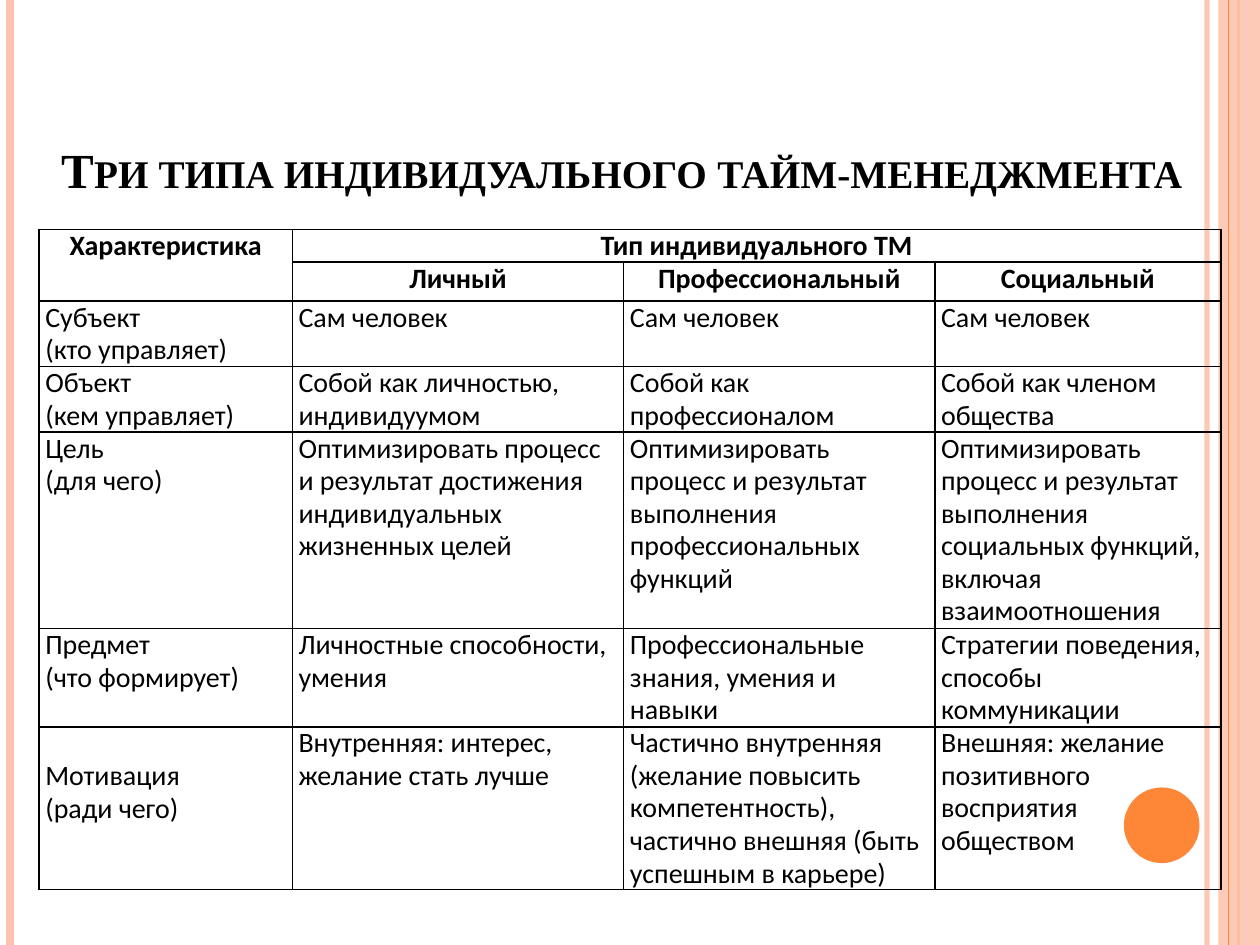
from lxml import etree
from pptx import Presentation
from pptx.dml.color import RGBColor
from pptx.enum.shapes import MSO_CONNECTOR, MSO_SHAPE
from pptx.enum.text import MSO_ANCHOR, PP_ALIGN
from pptx.oxml.ns import qn
from pptx.util import Inches, Pt

STRAIGHT = MSO_CONNECTOR.STRAIGHT
RECTANGLE, OVAL = MSO_SHAPE.RECTANGLE, MSO_SHAPE.OVAL
BOTTOM = MSO_ANCHOR.BOTTOM
LEFT, CENTER = PP_ALIGN.LEFT, PP_ALIGN.CENTER

BLACK = RGBColor(0x00, 0x00, 0x00)
ORANGE = RGBColor(0xFE, 0x86, 0x37)
PEACH = RGBColor(0xFE, 0xC3, 0xAE)

WIDTH, HEIGHT = 10, 7.5
TITLE = "Три типа индивидуального тайм-менеджмента"
HEADER_ROWS = 2
ROWS = [
    ["Характеристика", "Тип индивидуального ТМ", "", ""],
    ["", "Личный", "Профессиональный", "Социальный"],
    ["Субъект\n(кто управляет)", "Сам человек", "Сам человек", "Сам человек"],
    ["Объект\n(кем управляет)", "Собой как личностью, индивидуумом",
     "Собой как профессионалом", "Собой как членом общества"],
    ["Цель\n(для чего)",
     "Оптимизировать процесс и результат достижения индивидуальных жизненных целей",
     "Оптимизировать процесс и результат выполнения профессиональных функций",
     "Оптимизировать процесс и результат выполнения социальных функций, включая взаимоотношения"],
    ["Предмет\n(что формирует)", "Личностные способности, умения",
     "Профессиональные знания, умения и навыки",
     "Стратегии поведения, способы коммуникации"],
    ["Мотивация\n(ради чего)", "Внутренняя: интерес, желание стать лучше",
     "Частично внутренняя (желание повысить компетентность), "
     "частично внешняя (быть успешным в карьере)",
     "Внешняя: желание позитивного восприятия обществом"],
]
COLUMN_WIDTHS = [2.01, 2.63, 2.47, 2.27]
ROW_HEIGHTS = [0.26, 0.31, 0.52, 0.52, 1.56, 0.78, 1.29]
MERGES = [((0, 0), (1, 0)), ((0, 1), (0, 3))]
MOTIVATION_CELL = (6, 0)
LINE_HEIGHT = 0.26
STRIPES_BEHIND = [(9.58, PEACH, 3, 93), (0.08, PEACH, 4.5, 100), (9.83, ORANGE, 1.5, 100)]
STRIPES_FRONT = [(9.75, ORANGE, 0.75, 100)]


def set_opacity(element, percent):
    if percent < 100:
        color = next(element.iter(qn("a:srgbClr")))
        etree.SubElement(color, qn("a:alpha")).set("val", str(percent * 1000))


def add_stripes(page, stripes):
    for x, color, weight, opacity in stripes:
        stripe = page.shapes.add_connector(STRAIGHT, Inches(x), 0, Inches(x), Inches(HEIGHT))
        stripe.line.color.rgb = color
        stripe.line.width = Pt(weight)
        properties = stripe._element.spPr
        set_opacity(properties, opacity)
        etree.SubElement(properties, qn("a:effectLst"))


def add_filled(page, kind, color, opacity, *frame):
    shape = page.shapes.add_shape(kind, *map(Inches, frame))
    shape.shadow.inherit = False
    shape.fill.solid()
    shape.fill.fore_color.rgb = color
    shape.line.fill.background()
    set_opacity(shape._element.spPr, opacity)


def style_font(font, name, size, bold):
    font.name, font.size, font.bold = name, Pt(size), bold
    font.color.rgb = BLACK


def add_title(page):
    box = page.shapes.add_textbox(*map(Inches, (0.39, 0.6, 9.22, 1.02)))
    frame = box.text_frame
    frame.word_wrap = True
    frame.vertical_anchor = BOTTOM
    frame.text = TITLE
    span = frame.paragraphs[0].runs[0]
    style_font(span.font, "Times New Roman", 28, True)
    span.font._element.set("cap", "small")


def add_borders(cell):
    properties = cell._tc.get_or_add_tcPr()
    for side in ("lnL", "lnR", "lnT", "lnB"):
        border = etree.SubElement(properties, qn(f"a:{side}"), w=str(Pt(1)))
        fill = etree.SubElement(border, qn("a:solidFill"))
        etree.SubElement(fill, qn("a:srgbClr"), val=str(BLACK))


def fill_cell(cell, text, header):
    cell.margin_left = cell.margin_right = Inches(0.05)
    cell.margin_top = cell.margin_bottom = 0
    add_borders(cell)
    cell.fill.background()
    cell.text_frame.text = text
    for para in cell.text_frame.paragraphs:
        para.alignment = CENTER if header else LEFT
        para.line_spacing = 0.95
        style_font(para.font, "Calibri", 16, header)
        for span in para.runs:
            style_font(span.font, "Calibri", 16, header)


def add_types_table(page):
    frame = page.shapes.add_table(
        len(ROWS), len(COLUMN_WIDTHS), Inches(0.31), Inches(1.82),
        Inches(sum(COLUMN_WIDTHS)), Inches(sum(ROW_HEIGHTS)))
    table = frame.table
    table.first_row = table.horz_banding = False
    for column, width in zip(table.columns, COLUMN_WIDTHS):
        column.width = Inches(width)
    for row, height in zip(table.rows, ROW_HEIGHTS):
        row.height = Inches(height)
    for r, texts in enumerate(ROWS):
        for c, text in enumerate(texts):
            fill_cell(table.cell(r, c), text, r < HEADER_ROWS)
    table.cell(*MOTIVATION_CELL).margin_top = Inches(LINE_HEIGHT)
    for first, last in MERGES:
        table.cell(*first).merge(table.cell(*last))


def main():
    deck = Presentation()
    deck.slide_width, deck.slide_height = Inches(WIDTH), Inches(HEIGHT)
    page = deck.slides.add_slide(deck.slide_layouts[6])
    add_stripes(page, STRIPES_BEHIND)
    add_filled(page, RECTANGLE, PEACH, 87, 9.67, 0, 0.33, HEIGHT)
    add_stripes(page, STRIPES_FRONT)
    add_filled(page, OVAL, ORANGE, 100, 8.92, 6.25, 0.6, 0.6)
    add_title(page)
    add_types_table(page)
    deck.save("out.pptx")


if __name__ == "__main__":
    main()
